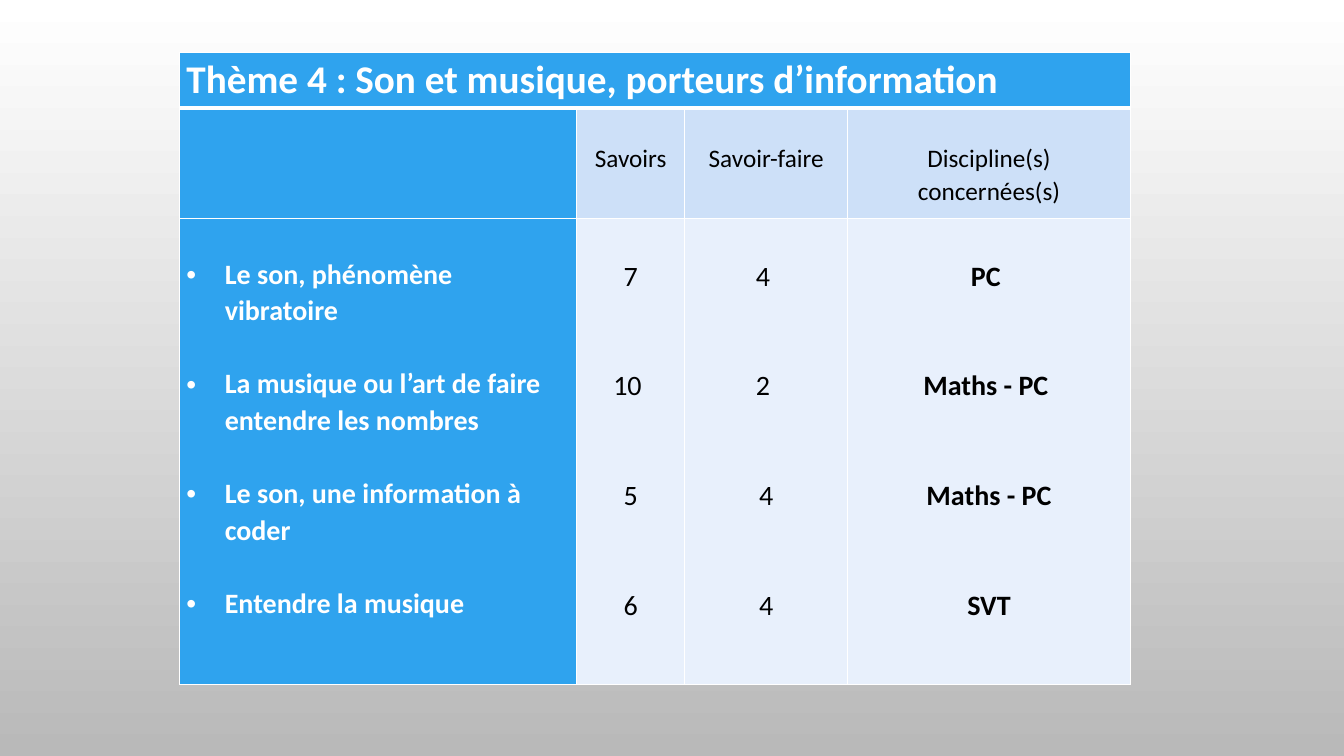
from dataclasses import dataclass

from lxml import etree
from pptx import Presentation
from pptx import util as u
from pptx.dml import color
from pptx.enum import text
from pptx.oxml import ns

BLUE, HEAD, PALE, WHITE, BLACK = "2FA3EE", "CDE0F8", "E8F0FC", "FFFFFF", "000000"
COLS = (3.94, 1.07, 1.62, 2.8)
ROWS = (0.55, 1.1, 4.62)
LINE = 26.1  # height of one 20 pt line, in points
HANG = 0.38


@dataclass
class Column:
    heading: str
    entries: tuple[str, ...]
    bold: bool = False


THEMES = (
    "Le son, phénomène vibratoire",
    "La musique ou l’art de faire entendre les nombres",
    "Le son, une information à coder",
    "Entendre la musique",
)
COLUMNS = (
    Column("Savoirs", ("7", "10\u00a0", "5", "6")),
    Column("Savoir-faire", ("4\u00a0", "2\u00a0", "4", "4")),
    Column("Discipline(s) concernées(s)",
           ("PC\u00a0", "Maths - PC\u00a0", "Maths - PC", "SVT"), bold=True),
)


def rgb(value: str) -> color.RGBColor:
    return color.RGBColor.from_string(value)


def add_border(cell, side: str, width: float, index: int) -> None:
    ln = etree.Element(ns.qn(f"a:ln{side}"), w=str(u.Pt(width)))
    fill = etree.SubElement(ln, ns.qn("a:solidFill"))
    etree.SubElement(fill, ns.qn("a:srgbClr"), val=WHITE)
    cell._tc.get_or_add_tcPr().insert(index, ln)


def style_cell(cell, fill: str, top: float = 1, bottom: float = 1) -> None:
    cell.fill.solid()
    cell.fill.fore_color.rgb = rgb(fill)
    for i, (side, width) in enumerate(zip("LRTB", (1, 1, top, bottom))):
        add_border(cell, side, width, i)


def add_bullet(p) -> None:
    pPr = p._p.get_or_add_pPr()
    pPr.set("marL", str(u.Inches(HANG)))
    pPr.set("indent", str(-u.Inches(HANG)))
    etree.SubElement(pPr, ns.qn("a:buFont"), typeface="Arial")
    etree.SubElement(pPr, ns.qn("a:buChar"), char="•")


def write(cell, lines, *, size: float = 20, hue: str = BLACK, bold: bool = False,
          center: bool = False, bullet: bool = False, top: float = 0,
          gap: float = 0) -> None:
    cell.margin_left = cell.margin_right = u.Inches(0.07)
    cell.margin_top, cell.margin_bottom = u.Inches(top), 0
    tf = cell.text_frame
    for i, line in enumerate(lines):
        p = tf.paragraphs[0] if i == 0 else tf.add_paragraph()
        p.line_spacing = 1.07
        if i:
            p.space_before = u.Pt(gap)
        p.alignment = text.PP_ALIGN.CENTER if center else text.PP_ALIGN.LEFT
        if bullet:
            add_bullet(p)
        r = p.add_run()
        r.text = line
        r.font.name, r.font.size, r.font.bold = "Calibri", u.Pt(size), bold
        r.font.color.rgb = rgb(hue)


def main() -> None:
    prs = Presentation()
    prs.slide_width, prs.slide_height = u.Inches(13.33), u.Inches(7.5)
    s = prs.slides.add_slide(prs.slide_layouts[6])

    # Background: white fading to grey downwards
    bg = s.background.fill
    bg.gradient()
    bg.gradient_angle = 270
    for stop, position, value in zip(bg.gradient_stops, (0, 1), (WHITE, "B9B9B9")):
        stop.position, stop.color.rgb = position, rgb(value)

    # Table grid
    table = s.shapes.add_table(len(ROWS), len(COLS), u.Inches(1.78), u.Inches(0.52),
                               u.Inches(sum(COLS)), u.Inches(sum(ROWS))).table
    table.first_row = table.horz_banding = False
    for column, width in zip(table.columns, COLS):
        column.width = u.Inches(width)
    for row, height in zip(table.rows, ROWS):
        row.height = u.Inches(height)

    # Fills and borders
    for c in range(len(COLS)):
        style_cell(table.cell(0, c), BLUE, bottom=3)
        style_cell(table.cell(1, c), HEAD if c else BLUE, top=3)
        style_cell(table.cell(2, c), PALE if c else BLUE)

    # Title row and theme list
    table.cell(0, 0).merge(table.cell(0, len(COLS) - 1))
    write(table.cell(0, 0), ["Thème 4 : Son et musique, porteurs d’information"],
          size=28, hue=WHITE, bold=True)
    write(table.cell(2, 0), THEMES, hue=WHITE, bold=True, bullet=True,
          top=0.36, gap=LINE)

    # Headings and entries, one entry every three lines
    for c, col in enumerate(COLUMNS, start=1):
        write(table.cell(1, c), [col.heading], size=18, center=True, top=0.33)
        write(table.cell(2, c), col.entries, bold=col.bold, center=True,
              top=0.38, gap=2 * LINE)

    prs.save("out.pptx")


if __name__ == "__main__":
    main()
